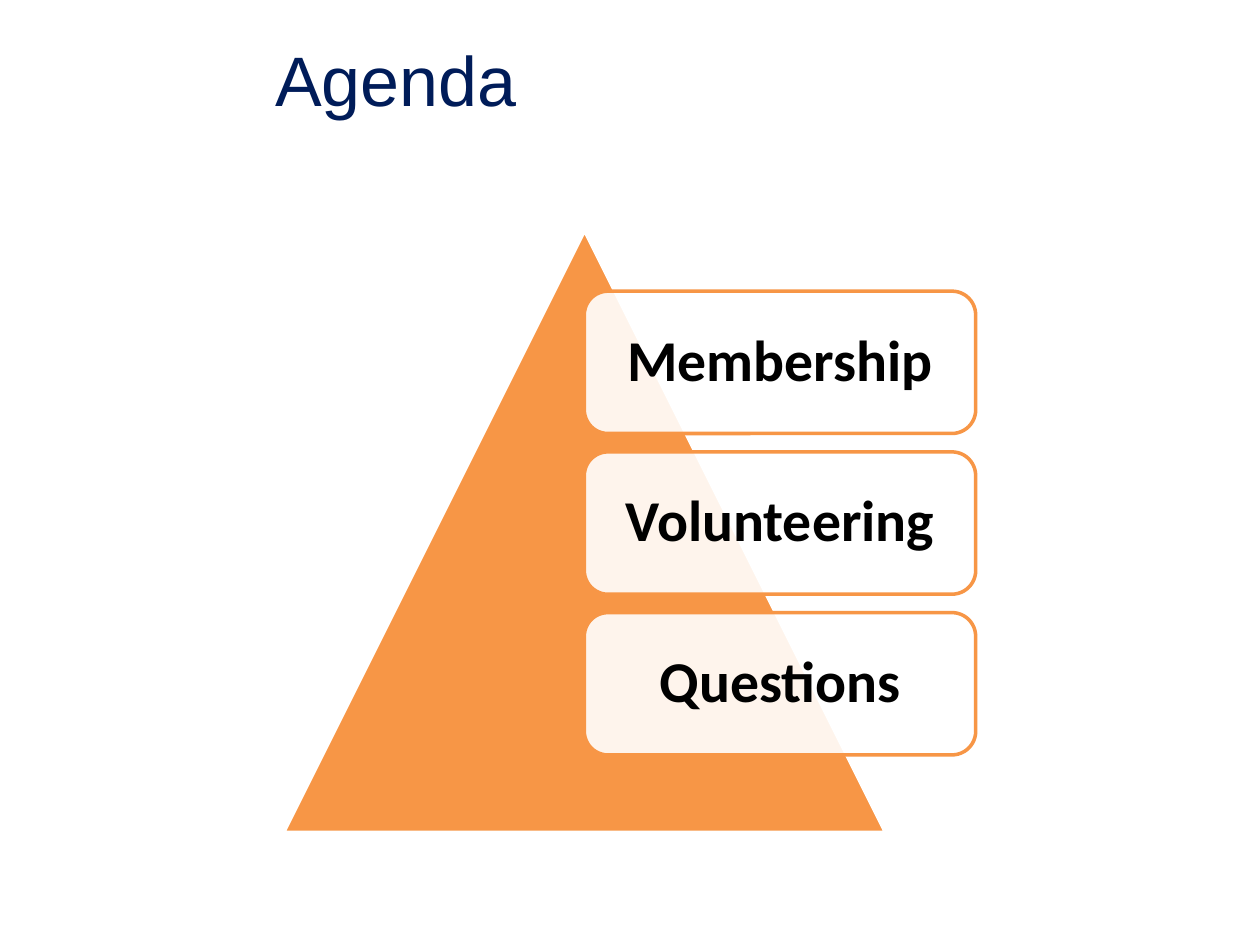
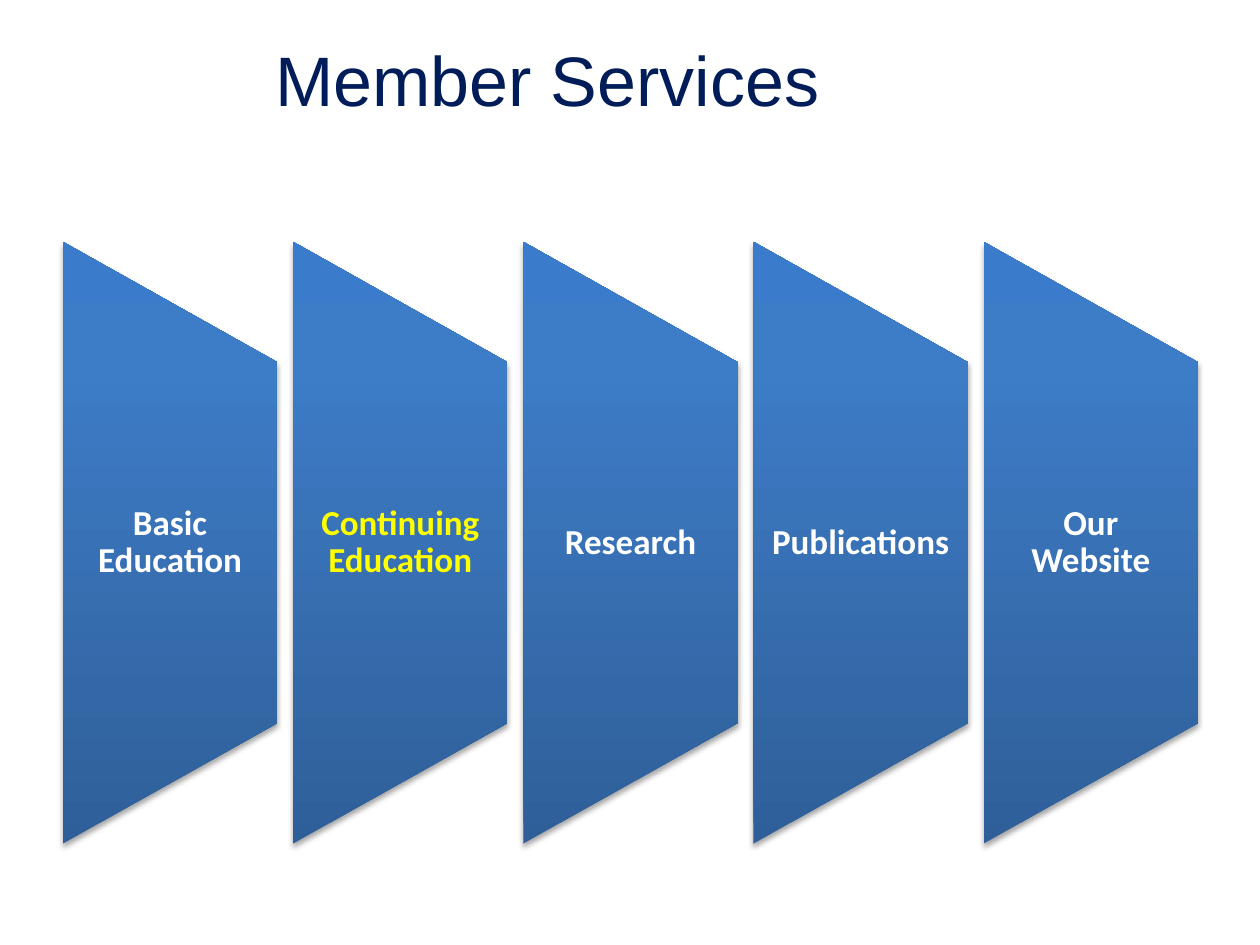
from lxml import etree
from pptx import Presentation
from pptx import util as u
from pptx.dml.color import RGBColor
from pptx.enum import shapes, text
from pptx.oxml import parse_xml
from pptx.oxml.ns import nsdecls, qn

AGENDA = ["Membership", "Volunteering", "Questions"]
# service, colour of its label
SERVICES = [
    ("Basic Education", "white"),
    ("Continuing Education", "yellow"),
    ("Research", "white"),
    ("Publications", "white"),
    ("Our Website", "white"),
]

COLOURS = {
    "navy": "001C59",
    "orange": "F79646",
    "white": "FFFFFF",
    "black": "000000",
    "yellow": "FFFF00",
}
PANEL_GRADIENT = [(0, "2F5F99"), (80, "3D7CC7"), (100, "3A7CCB")]

TITLE_BOX = {"left": u.Cm(5.29), "top": u.Cm(0), "width": u.Cm(18.84), "height": u.Cm(3.18)}
TITLE_FONT = {"name": "Arial", "size": u.Pt(40), "bold": False}
AGENDA_FONT = {"name": "Calibri", "size": u.Pt(33), "bold": True}
SERVICE_FONT = {"name": "Calibri", "size": u.Pt(20), "bold": True}
INSET = u.Cm(0.35)
AGENDA_FRAME = dict.fromkeys(
    ["margin_left", "margin_right", "margin_top", "margin_bottom"], INSET)
SERVICE_FRAME = {"margin_left": INSET, "margin_right": INSET,
                 "margin_top": 0, "margin_bottom": 0}

FIGURE_SIZE = 12.13  # cm: side of the pyramid and height of the panels


def rgb(name):
    return RGBColor.from_string(COLOURS[name])


def apply(target, values):
    for name, value in values.items():
        setattr(target, name, value)


def write(shape, words, font, colour, frame_format, align=text.PP_ALIGN.CENTER):
    frame = shape.text_frame
    frame.text = words
    apply(frame, {"word_wrap": True, "auto_size": text.MSO_AUTO_SIZE.NONE,
                  "vertical_anchor": text.MSO_ANCHOR.MIDDLE, **frame_format})
    paragraph = frame.paragraphs[0]
    paragraph.alignment = align
    if align == text.PP_ALIGN.CENTER:
        paragraph.line_spacing = 0.9
    apply(paragraph.font, font)
    paragraph.font.color.rgb = rgb(colour)


def add_titled_slide(presentation, title):
    slide = presentation.slides.add_slide(presentation.slide_layouts[5])
    apply(slide.shapes.title, TITLE_BOX)
    write(slide.shapes.title, title, TITLE_FONT, "navy", {}, text.PP_ALIGN.LEFT)
    return slide


def add_outlined(slide, kind, box, fill, line):
    shape = slide.shapes.add_shape(kind, *map(u.Cm, box))
    shape.shadow.inherit = False
    shape.fill.solid()
    shape.fill.fore_color.rgb = rgb(fill)
    shape.line.color.rgb = rgb(line)
    shape.line.width = u.Pt(2)
    return shape


def set_opacity(shape, percent):
    colour = shape.fill._xPr.find(qn("a:solidFill"))[0]
    etree.SubElement(colour, qn("a:alpha")).set("val", str(percent * 1000))


def style_panel(shape):
    """Give an upright gradient and a soft shadow below, whatever the rotation."""
    shape.line.fill.background()
    stops = "".join(f'<a:gs pos="{position * 1000}"><a:srgbClr val="{colour}"/></a:gs>'
                    for position, colour in PANEL_GRADIENT)
    gradient = parse_xml(
        f'<a:gradFill {nsdecls("a")} rotWithShape="0"><a:gsLst>{stops}</a:gsLst>'
        '<a:lin ang="16200000" scaled="0"/></a:gradFill>')
    shadow = parse_xml(
        f'<a:effectLst {nsdecls("a")}><a:outerShdw blurRad="40000" dist="23000" '
        f'dir="5400000" rotWithShape="0"><a:srgbClr val="{COLOURS["black"]}">'
        '<a:alpha val="35000"/></a:srgbClr></a:outerShdw></a:effectLst>')
    line = shape.line._ln
    line.addprevious(gradient)
    line.addnext(shadow)


def build_agenda(presentation):
    slide = add_titled_slide(presentation, "Agenda")
    add_outlined(slide, shapes.MSO_SHAPE.ISOSCELES_TRIANGLE,
                 (5.72, 4.65, FIGURE_SIZE, FIGURE_SIZE), "orange", "white")
    left, top, width, height, pitch = 11.78, 5.87, 7.89, 2.87, 3.24
    for row, topic in enumerate(AGENDA):
        card = add_outlined(slide, shapes.MSO_SHAPE.ROUNDED_RECTANGLE,
                            (left, top + row * pitch, width, height), "white", "orange")
        set_opacity(card, 90)
        write(card, topic, AGENDA_FONT, "black", AGENDA_FRAME)


def build_services(presentation):
    slide = add_titled_slide(presentation, "Member Services")
    left, middle, width, pitch, label_height = 1.27, 10.94, 4.32, 4.64, 7.28
    for column, (service, colour) in enumerate(SERVICES):
        x = left + column * pitch
        # The panel is laid flat around its centre, then turned upright.
        panel = slide.shapes.add_shape(
            shapes.MSO_SHAPE.FLOWCHART_MANUAL_OPERATION,
            u.Cm(x + (width - FIGURE_SIZE) / 2), u.Cm(middle - width / 2),
            u.Cm(FIGURE_SIZE), u.Cm(width))
        panel.rotation = 270
        style_panel(panel)
        label = slide.shapes.add_textbox(
            u.Cm(x), u.Cm(middle - label_height / 2), u.Cm(width), u.Cm(label_height))
        write(label, service, SERVICE_FONT, colour, SERVICE_FRAME)


def main():
    presentation = Presentation()
    presentation.slide_width = u.Cm(25.4)
    presentation.slide_height = u.Cm(19.05)
    build_agenda(presentation)
    build_services(presentation)
    presentation.save("out.pptx")


if __name__ == "__main__":
    main()
